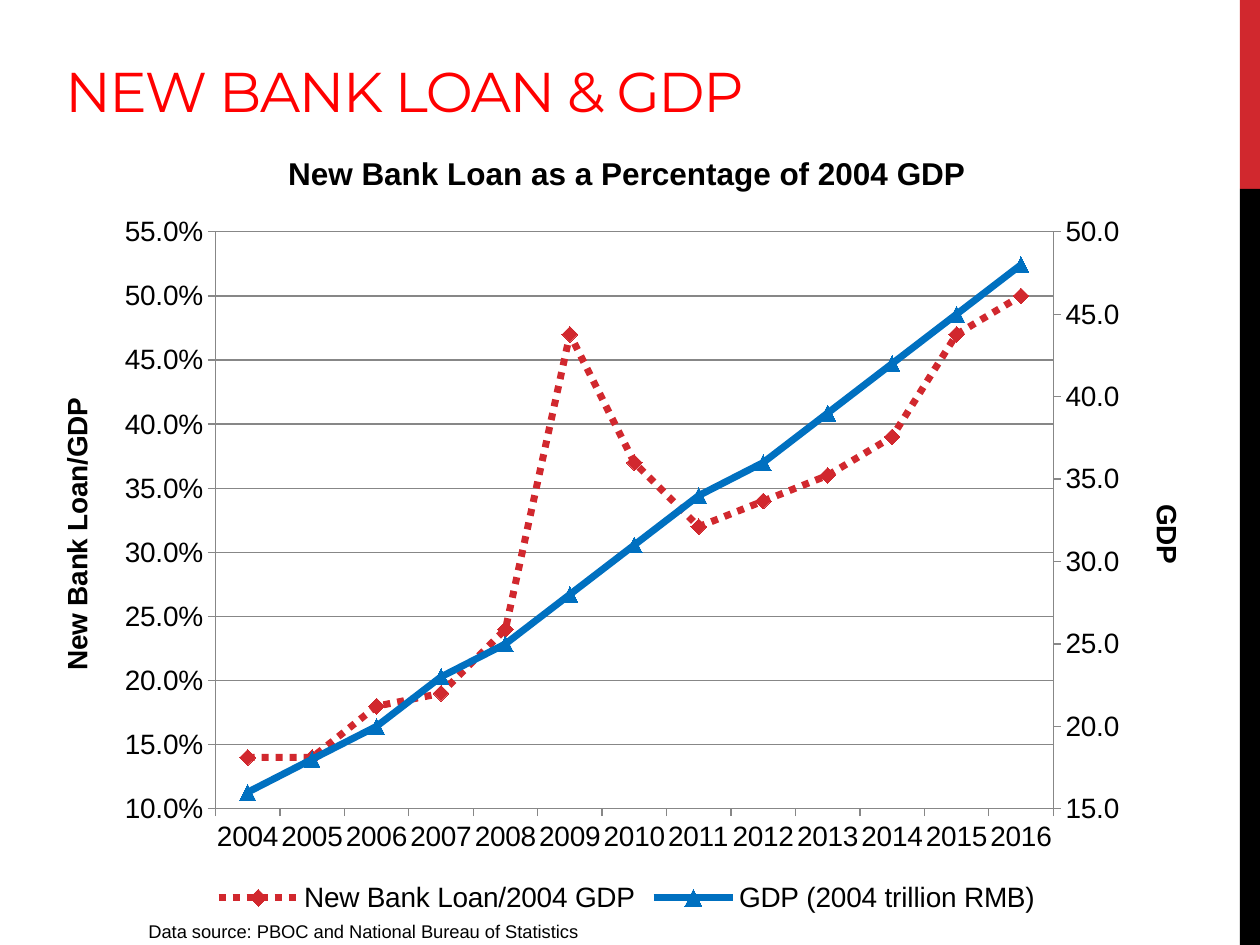
from copy import deepcopy
from lxml import etree
from pptx import Presentation, util as u
from pptx.chart import axis, data
from pptx.dml.color import RGBColor
from pptx.enum import chart as ec, dml, shapes, text
from pptx.oxml.ns import qn

theme = {
    "red": RGBColor.from_string("D1282E"),
    "marker_red": RGBColor.from_string("D1281A"),
    "title_red": RGBColor.from_string("FF0000"),
    "blue": RGBColor.from_string("0070C0"),
    "black": RGBColor.from_string("000000"),
    "grid": RGBColor.from_string("878787"),
    "title": u.Pt(32),
    "chart_title": u.Pt(18),
    "label": u.Pt(16),
    "source": u.Pt(10.5),
}


def style(font, size, color="black", name="Arial", bold=False):
    values = {"size": theme[size], "name": name, "bold": bold}
    for key, value in values.items():
        setattr(font, key, value)
    font.color.rgb = theme[color]


def set_title(owner, title, size, rotation=0):
    tf = owner.text_frame
    tf.text = title
    style(tf.paragraphs[0].runs[0].font, size, bold=True)
    body = tf._txBody.find(qn("a:bodyPr"))
    body.set("rot", str(rotation * 60000))
    body.set("vert", "horz")


prs = Presentation()
prs.slide_width, prs.slide_height = u.Inches(10), u.Inches(7.5)
s = prs.slides.add_slide(prs.slide_layouts[6])

for top, height, color in [(0, 1.5, "red"), (1.5, 6, "black")]:
    sp = s.shapes.add_shape(shapes.MSO_SHAPE.RECTANGLE, u.Inches(9.84),
                            u.Inches(top), u.Inches(0.16), u.Inches(height))
    sp.shadow.inherit = False
    sp.fill.solid()
    sp.fill.fore_color.rgb = theme[color]
    sp.line.fill.background()

labels = [
    ("NEW BANK LOAN & GDP", (0.42, 0.25, 9.1, 0.93), "title", "title_red",
     "Montserrat", text.MSO_ANCHOR.MIDDLE, -80),
    ("Data source: PBOC and National Bureau of Statistics",
     (1.08, 7.25, 4.33, 0.28), "source", "black", "Arial",
     text.MSO_ANCHOR.TOP, 0),
]
for label, box, size, color, face, anchor, spacing in labels:
    tf = s.shapes.add_textbox(*map(u.Inches, box)).text_frame
    tf.word_wrap = True
    tf.vertical_anchor = anchor
    r = tf.paragraphs[0].add_run()
    r.text = label
    style(r.font, size, color, face)
    r.font._element.set("spc", str(spacing))

cd = data.CategoryChartData()
cd.categories = [str(year) for year in range(2004, 2017)]
cd.add_series("New Bank Loan/2004 GDP",
              [0.14, 0.14, 0.18, 0.19, 0.24, 0.47, 0.37,
               0.32, 0.34, 0.36, 0.39, 0.47, 0.5], "0.0%")
cd.add_series("GDP (2004 trillion RMB)",
              [16, 18, 20, 23, 25, 28, 31, 34, 36, 39, 42, 45, 48], "0.0")
chart = s.shapes.add_chart(ec.XL_CHART_TYPE.LINE_MARKERS, u.Inches(0.25),
                           u.Inches(0.99), u.Inches(9.45), u.Inches(6.3),
                           cd).chart
style(chart.font, "label")
set_title(chart.chart_title, "New Bank Loan as a Percentage of 2004 GDP",
          "chart_title")
chart.has_legend = True
chart.legend.position = ec.XL_LEGEND_POSITION.BOTTOM
chart.legend.include_in_layout = False
style(chart.legend.font, "label")

plot = chart.plots[0]
plot.vary_by_categories = False
looks = [
    ("red", "marker_red", dml.MSO_LINE.ROUND_DOT, ec.XL_MARKER_STYLE.DIAMOND),
    ("blue", "blue", dml.MSO_LINE.SOLID, ec.XL_MARKER_STYLE.TRIANGLE),
]
for series, (color, marker, dash, symbol) in zip(plot.series, looks):
    series.smooth = False
    line = series.format.line
    line.width, line.dash_style = u.Pt(4), dash
    line.color.rgb = theme[color]
    series.marker.style, series.marker.size = symbol, 9
    series.marker.format.fill.solid()
    series.marker.format.fill.fore_color.rgb = theme[marker]
    series.marker.format.line.color.rgb = theme[marker]

cat, left = chart.category_axis, chart.value_axis
cat_xml, left_xml = cat._element, left._element
line_xml = left_xml.getparent().find(qn("c:lineChart"))
right_line, right_xml, hidden_xml = map(deepcopy, (line_xml, left_xml, cat_xml))
line_xml.remove(line_xml.findall(qn("c:ser"))[1])
right_line.remove(right_line.find(qn("c:ser")))
line_xml.addnext(right_line)
left_xml.addnext(right_xml)
right_xml.addnext(hidden_xml)
for element, value in zip(right_line.findall(qn("c:axId")), ("5001", "5002")):
    element.set("val", value)
for element, own, other in [(hidden_xml, "5001", "5002"),
                            (right_xml, "5002", "5001")]:
    element.find(qn("c:axId")).set("val", own)
    element.find(qn("c:crossAx")).set("val", other)
right_xml.find(qn("c:axPos")).set("val", "r")
right_xml.find(qn("c:crosses")).set("val", "max")
right = axis.ValueAxis(right_xml)
axis.CategoryAxis(hidden_xml).visible = False

scales = [
    (left, 0.1, 0.55, 0.05, "0.0%", "New Bank Loan/GDP", -90),
    (right, 15, 50, 5, "0.0", "GDP", 90),
]
for ax, low, high, step, fmt, title, rotation in scales:
    values = {"minimum_scale": low, "maximum_scale": high, "major_unit": step,
              "has_major_gridlines": ax is left}
    for key, value in values.items():
        setattr(ax, key, value)
    ax.tick_labels.number_format = fmt
    ax.tick_labels.number_format_is_linked = False
    set_title(ax.axis_title, title, "label", rotation)
left.major_gridlines.format.line.color.rgb = theme["grid"]
for ax in (cat, left, right):
    ax.major_tick_mark = ec.XL_TICK_MARK.OUTSIDE
    ax.minor_tick_mark = ec.XL_TICK_MARK.NONE
    ax.format.line.color.rgb = theme["grid"]
    style(ax.tick_labels.font, "label")

area = left_xml.getparent()
for old in area.findall(qn("c:layout")):
    area.remove(old)
layout = etree.Element(qn("c:layout"))
manual = etree.SubElement(layout, qn("c:manualLayout"))
for tag, value in [("layoutTarget", "inner"), ("xMode", "edge"),
                   ("yMode", "edge"), ("x", 1.46 / 9.45), ("y", 0.85 / 6.3),
                   ("w", 6.65 / 9.45), ("h", 4.58 / 6.3)]:
    etree.SubElement(manual, qn("c:" + tag)).set("val", str(value))
area.insert(0, layout)

prs.save("out.pptx")
